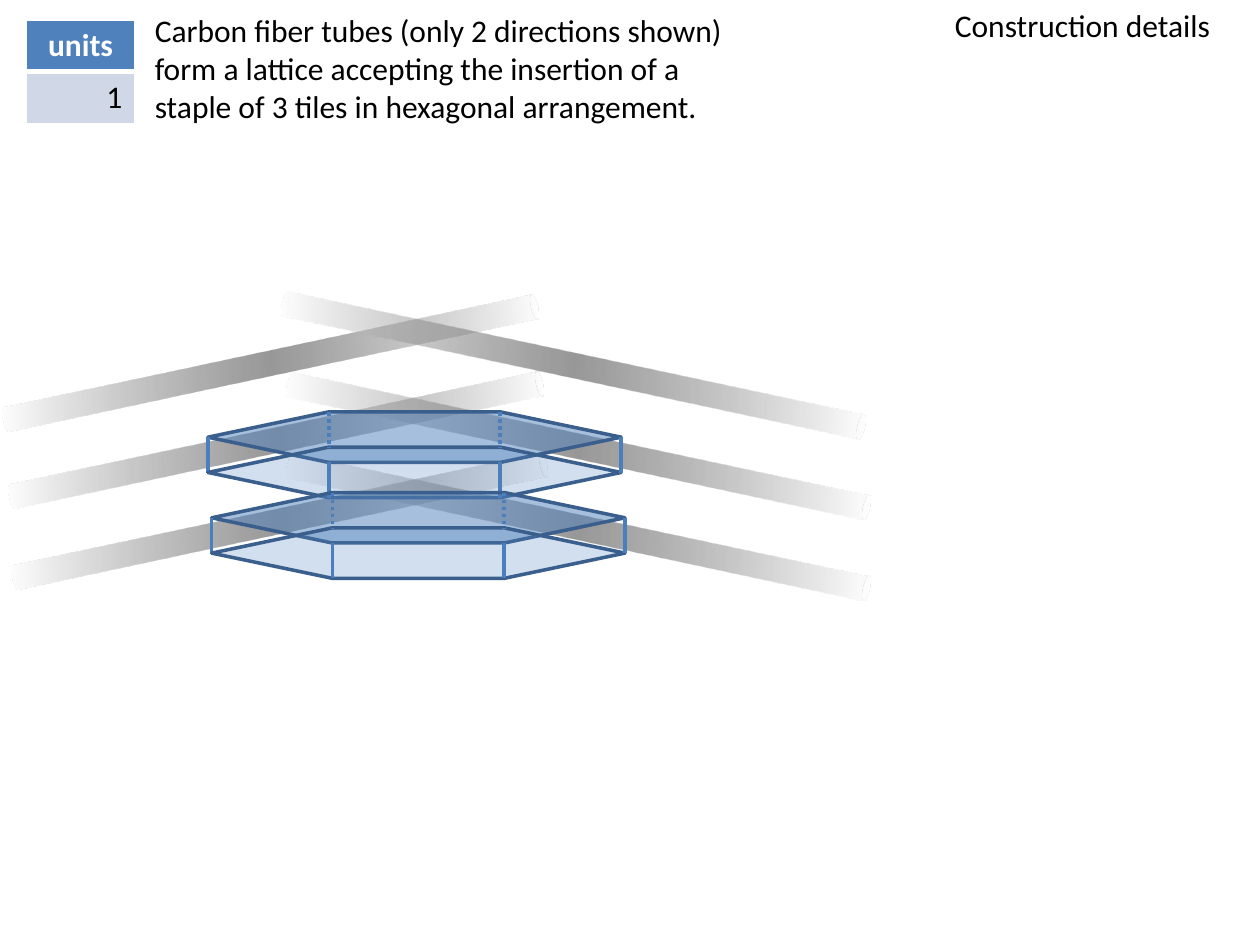
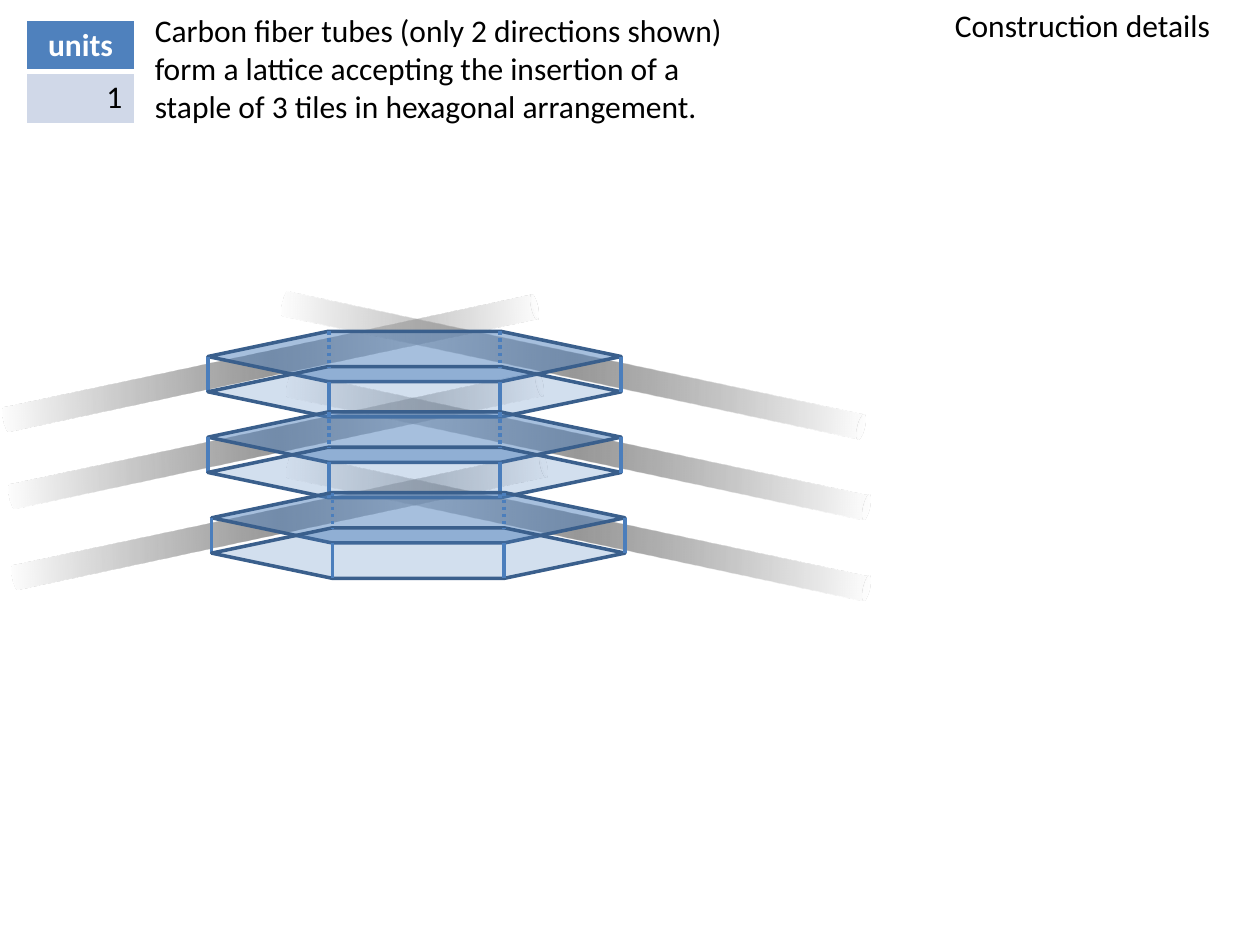
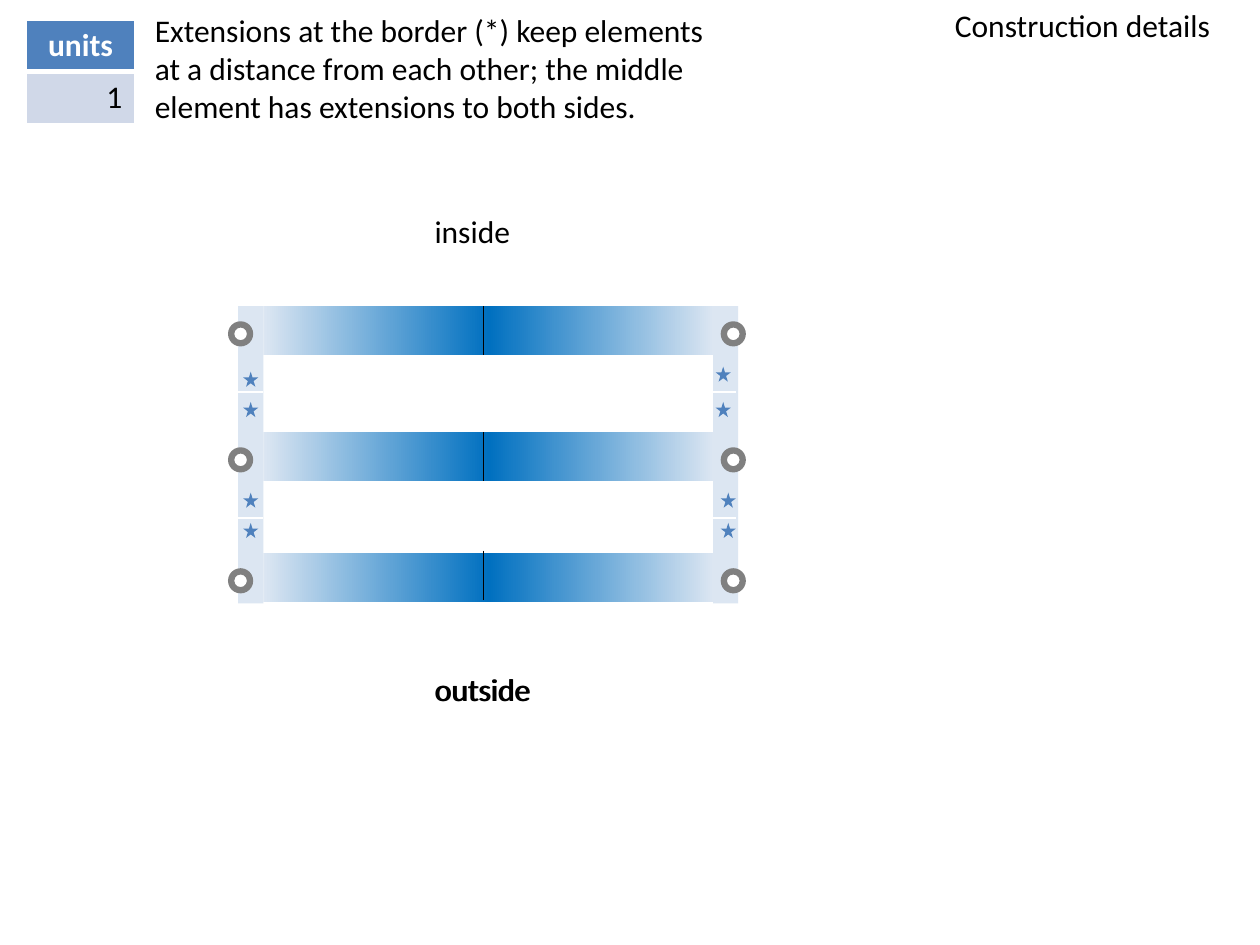
from copy import deepcopy

from lxml.etree import SubElement
from pptx import Presentation
from pptx.dml.color import RGBColor
from pptx.enum.dml import MSO_LINE
from pptx.enum.shapes import MSO_CONNECTOR, MSO_SHAPE
from pptx.enum.text import MSO_AUTO_SIZE, PP_ALIGN
from pptx.oxml.ns import qn
from pptx.util import Pt

PX = 9144  # EMU per px, 100 px to the inch
FONT = "Calibri"
TEXT_SIZE = 18

WHITE, BLACK, GREY = "FFFFFF", "000000", "808080"
BLUE, BLUE_OUTLINE, BLUE_EDGE = "4F81BD", "3A5F8C", "4B7EBC"
BLUE_CELL, BLUE_PALE, BLUE_DEEP = "D0D8E8", "DCE6F2", "0070C0"

TUBE_STOPS = [(0, WHITE, 50), (0.5, BLACK, 40), (1, WHITE, 50)]
BAR_STOPS = [(0, BLUE_PALE, 100), (0.5, BLUE_DEEP, 100), (1, BLUE_PALE, 100)]

CAN, HEXAGON, RECT = MSO_SHAPE.CAN, MSO_SHAPE.HEXAGON, MSO_SHAPE.RECTANGLE
OVAL, DONUT, STAR = MSO_SHAPE.OVAL, MSO_SHAPE.DONUT, MSO_SHAPE.STAR_5_POINT
STRAIGHT, DOTTED = MSO_CONNECTOR.STRAIGHT, MSO_LINE.ROUND_DOT
FIT_TEXT = MSO_AUTO_SIZE.SHAPE_TO_FIT_TEXT
CENTER, RIGHT = PP_ALIGN.CENTER, PP_ALIGN.RIGHT

LATTICE_TEXT = ("Carbon fiber tubes (only 2 directions shown) form a lattice accepting "
                "the insertion of a staple of 3 tiles in hexagonal arrangement.")
BORDER_TEXT = ("Extensions at the border (*) keep elements at a distance from each other; "
               "the middle element has extensions to both sides.")

UNITS_BOX = (21, 16, 86, 82)
DESCRIPTION_BOX = (113, 4, 475, 101)
TITLE_BOX = (748, 0, 225, 40)
LATTICE_BOX = (205, 54, 264, 600)
SECTION_BOX = (181, 243, 411, 236)
TILE_SIZE = (328, 40)
TOP_TILE, MIDDLE_TILE, BOTTOM_TILE = (165, 263), (165, 327), (168, 391)


# Shared helpers
def emu(*lengths):
    return [length * PX for length in lengths]


def paint(color, hex_code, opacity=100):
    color.rgb = RGBColor.from_string(hex_code)
    if opacity < 100:
        srgb = color._xFill.find(qn("a:srgbClr"))
        SubElement(srgb, qn("a:alpha")).set("val", str(opacity * 1000))


def add_solid(shapes, kind, box, fill=None, opacity=100, outline=None):
    shape = shapes.add_shape(kind, *emu(*box))
    shape.shadow.inherit = False
    if fill:
        shape.fill.solid()
        paint(shape.fill.fore_color, fill, opacity)
    if outline:
        paint(shape.line.color, outline)
        shape.line.width = Pt(2)
    else:
        shape.line.fill.background()
    return shape


def add_gradient(shapes, kind, box, stops, angle):
    shape = add_solid(shapes, kind, box)
    shape.fill.gradient()
    shape.fill.gradient_angle = 360 - angle
    stop_list = shape._element.spPr.find(".//" + qn("a:gsLst"))
    stop_list.append(deepcopy(stop_list[0]))
    for stop, (position, hex_code, opacity) in zip(shape.fill.gradient_stops, stops):
        stop.position = position
        paint(stop.color, hex_code, opacity)
    return shape


def add_line(shapes, start, end, hex_code, width, dash=None):
    line = shapes.add_connector(STRAIGHT, *emu(*start, *end))
    paint(line.line.color, hex_code)
    line.line.width = Pt(width)
    if dash:
        line.line.dash_style = dash
    SubElement(line._element.spPr, qn("a:effectLst"))


def write(paragraph, text, hex_code=BLACK, bold=False):
    run = paragraph.add_run()
    run.text = text
    run.font.name = FONT
    run.font.size = Pt(TEXT_SIZE)
    run.font.bold = bold
    paint(run.font.color, hex_code)


def add_text(slide, box, text, wrap=False):
    frame = slide.shapes.add_textbox(*emu(*box)).text_frame
    frame.word_wrap = wrap
    frame.auto_size = FIT_TEXT
    write(frame.paragraphs[0], text)


# Units table
def add_border(cell, side, width):
    border = SubElement(cell._tc.get_or_add_tcPr(), qn("a:ln" + side))
    border.set("w", str(Pt(width)))
    fill = SubElement(border, qn("a:solidFill"))
    SubElement(fill, qn("a:srgbClr")).set("val", WHITE)


def add_units(slide, box):
    table = slide.shapes.add_table(2, 1, *emu(*box)).table
    rows = [("units", CENTER, WHITE, True, BLUE, (1, 1, 1, 3)),
            ("1", RIGHT, BLACK, False, BLUE_CELL, (1, 1, 3, 1))]
    for index, (text, align, hex_code, bold, fill, borders) in enumerate(rows):
        cell = table.cell(index, 0)
        for side, width in zip("LRTB", borders):
            add_border(cell, side, width)
        cell.fill.solid()
        paint(cell.fill.fore_color, fill)
        paragraph = cell.text_frame.paragraphs[0]
        paragraph.alignment = align
        write(paragraph, text, hex_code, bold)


# Frame that every slide shares
def add_detail_slide(deck, description):
    slide = deck.slides.add_slide(deck.slide_layouts[6])
    add_units(slide, UNITS_BOX)
    add_text(slide, DESCRIPTION_BOX, description, wrap=True)
    add_text(slide, TITLE_BOX, "Construction details")
    return slide


# Crossing carbon fiber tubes
def add_lattice(slide, box):
    left, top = box[:2]
    rising = [(7, 143), (4, 79), (0, 18)]
    falling = [(244, 128), (244, 64), (240, 0)]
    for offsets, length, rotation in ((rising, 433, 78), (falling, 472, 102)):
        for x, y in offsets:
            tube = add_gradient(slide.shapes, CAN, (left + x, top + y, 20, length),
                                TUBE_STOPS, 80)
            tube.rotation = rotation
            if offsets is rising:
                tube._element.spPr.find(qn("a:xfrm")).set("flipH", "1")


# Glass-like hexagonal tile
def add_tile(slide, box):
    left, top, width, height = box
    depth, inset = 28, 96
    middle = top + height // 2
    front = top + height
    corners = (left + inset, left + width - inset)
    parts = slide.shapes.add_group_shape().shapes

    def add_face(y, opacity):
        face = add_solid(parts, HEXAGON, (left, y, width, height), BLUE, opacity, BLUE_OUTLINE)
        face.adjustments[0] = 2.387

    def add_edge(x, y, dash=None):
        add_line(parts, (x, y), (x, y + depth), BLUE_EDGE, 2, dash)

    add_face(top, 50)
    add_edge(left, middle)
    add_face(top + depth, 25)
    add_edge(left + width, middle)
    for y, dash in ((top, DOTTED), (front, None)):
        for x in corners:
            add_edge(x, y, dash)


def build_lattice_slide(deck, tiles):
    slide = add_detail_slide(deck, LATTICE_TEXT)
    add_lattice(slide, LATTICE_BOX)
    for position in tiles:
        add_tile(slide, position + TILE_SIZE)


# Tube end seen in section
def add_ring(slide, box):
    left, top, width, height = box
    parts = slide.shapes.add_group_shape().shapes
    add_solid(parts, OVAL, (left + 4, top + 4, width - 8, height - 8), WHITE)
    add_solid(parts, DONUT, box, GREY)


# Three elements held apart by their border extensions
def add_section(slide, box):
    left, top, _, height = box
    bar_tops = [top, top + 100, top + 196]
    seam_tops = [top, top + 100, top + 194]

    for x in (8, 385):
        add_solid(slide.shapes, RECT, (left + x, top, 20, height), BLUE_PALE)
    for y in bar_tops:
        add_gradient(slide.shapes, RECT, (left + 28, y, 358, 39), BAR_STOPS, 180)
    for x in (0, 391):
        for y in bar_tops:
            add_ring(slide, (left + x, y + 12, 20, 20))

    # Joints between extensions, and seams in the elements
    for x in (left + 8, left + 383):
        for y in (top + 68, top + 168):
            add_line(slide.shapes, (x, y), (x + 20, y), WHITE, 1.5)
    for y in seam_tops:
        add_line(slide.shapes, (left + 203, y), (left + 203, y + 39), BLACK, 0.75)

    # Stars on the extensions
    stars = [(12, 52), (12, 76), (12, 148), (12, 172),
             (387, 48), (387, 76), (391, 148), (391, 172)]
    for x, y in stars:
        add_solid(slide.shapes, STAR, (left + x, top + y, 12, 12), BLUE)


def build_border_slide(deck):
    slide = add_detail_slide(deck, BORDER_TEXT)
    add_section(slide, SECTION_BOX)
    add_text(slide, (335, 163, 81, 40), "inside")
    # Two offset copies thicken the label
    for x in (335, 336):
        add_text(slide, (x, 527, 97, 40), "outside")


def main():
    deck = Presentation()
    deck.slide_width, deck.slide_height = emu(1000, 750)
    build_lattice_slide(deck, [MIDDLE_TILE, BOTTOM_TILE])
    build_lattice_slide(deck, [TOP_TILE, MIDDLE_TILE, BOTTOM_TILE])
    build_border_slide(deck)
    deck.save("out.pptx")


if __name__ == "__main__":
    main()
